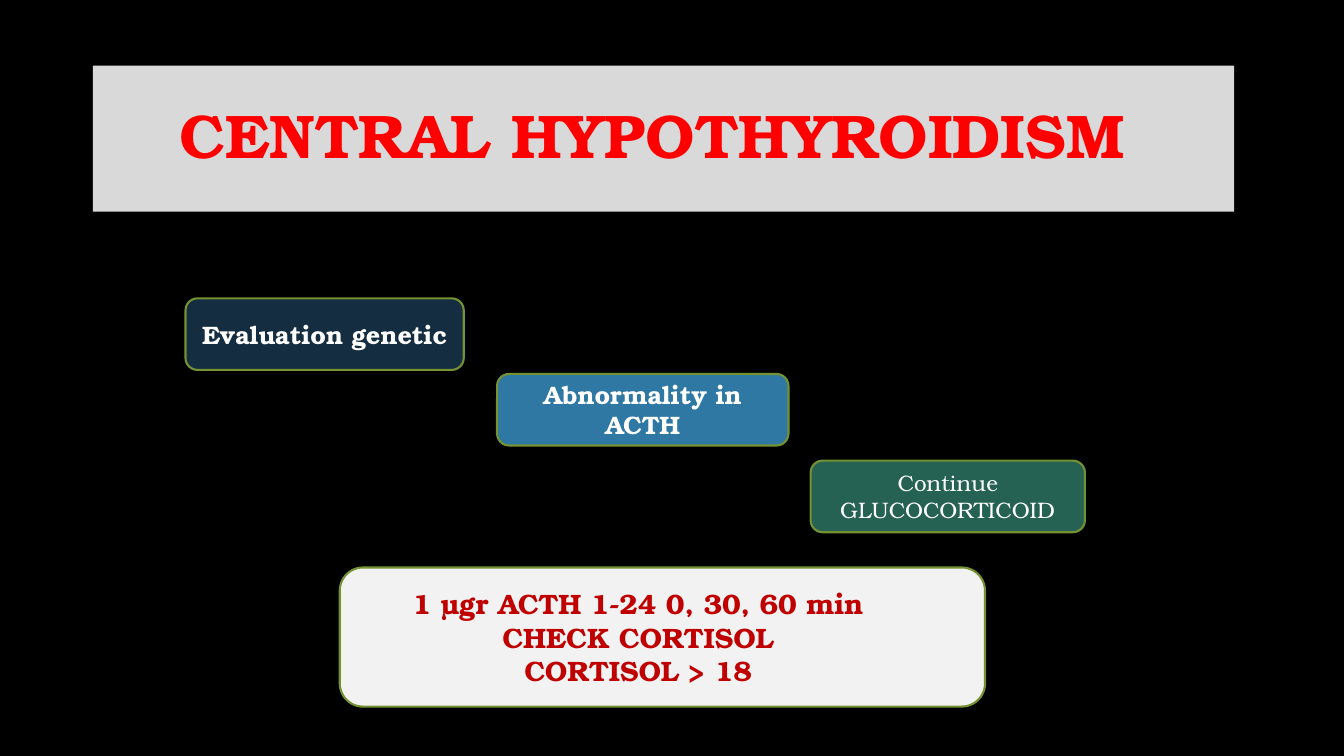
from dataclasses import dataclass

from pptx import Presentation
from pptx.dml.color import RGBColor as Rgb
from pptx.enum.shapes import MSO_SHAPE as Kind
from pptx.enum.text import MSO_ANCHOR as Anchor, PP_ALIGN as Align
from pptx.util import Inches, Pt


@dataclass(frozen=True)
class Theme:
    """Colours, font and type sizes of the slide."""
    font: str = "TeX Gyre Bonum"
    back: str = "000000"
    band: str = "D9D9D9"
    title: str = "FF0000"
    edge: str = "759232"
    navy: str = "152D40"
    blue: str = "2E78A3"
    green: str = "256253"
    white: str = "FFFFFF"
    panel: str = "F2F2F2"
    alert: str = "C00000"
    head: int = 44
    test: int = 20
    step: int = 18
    small: int = 16


LOOK = Theme()


def write(shape, text, size, color, bold=True, space=1.0, right=0.1, pads=()):
    """Fill a shape with centred lines; pads are right indents by line."""
    frame = shape.text_frame
    frame.word_wrap = True
    frame.vertical_anchor = Anchor.MIDDLE
    frame.margin_right = Inches(right)
    frame.text = text
    for para in frame.paragraphs:
        para.alignment = Align.CENTER
        para.line_spacing = space
        font = para.font
        font.name, font.size, font.bold = LOOK.font, Pt(size), bold
        font.color.rgb = Rgb.from_string(color)
    for para, pad in zip(frame.paragraphs, pads):
        para._p.get_or_add_pPr().set("marR", str(Inches(pad)))


def block(slide, box, fill, kind=Kind.ROUNDED_RECTANGLE, edge=LOOK.edge):
    """Draw a filled block in a box of inches, with an optional edge."""
    shape = slide.shapes.add_shape(kind, *map(Inches, box))
    shape.shadow.inherit = False
    shape.fill.solid()
    shape.fill.fore_color.rgb = Rgb.from_string(fill)
    if edge:
        shape.line.color.rgb = Rgb.from_string(edge)
        shape.line.width = Pt(1.5)
    else:
        shape.line.fill.background()
    return shape


def header(slide, box):
    """Draw the title band."""
    band = block(slide, box, LOOK.band, Kind.RECTANGLE, None)
    write(band, "CENTRAL HYPOTHYROIDISM", LOOK.head, LOOK.title,
          space=0.9, right=0.32)


def steps(slide, box):
    """Draw the three steps descending from the top left of the box."""
    left, top, width, height = box
    high = 0.71
    items = [
        (0, 0, 2.76, LOOK.navy, "Evaluation genetic", LOOK.step, True),
        (3.09, 0.75, 2.89, LOOK.blue, "Abnormality in ACTH", LOOK.step, True),
        (width - 2.72, height - high, 2.72, LOOK.green,
         "Continue GLUCOCORTICOID", LOOK.small, False),
    ]
    for x, y, wide, fill, text, size, bold in items:
        step = block(slide, (left + x, top + y, wide, high), fill)
        write(step, text, size, LOOK.white, bold)


def protocol(slide, box):
    """Draw the panel with the test protocol."""
    lines = ["1 µgr ACTH 1-24 0, 30, 60 min", "CHECK CORTISOL", "CORTISOL > 18"]
    write(block(slide, box, LOOK.panel), "\n".join(lines), LOOK.test,
          LOOK.alert, right=0.2, pads=(0.38,))


def main():
    """Build and save the slide."""
    deck = Presentation()
    deck.slide_width, deck.slide_height = Inches(13.33), Inches(7.5)
    slide = deck.slides.add_slide(deck.slide_layouts[6])
    back = slide.background.fill
    back.solid()
    back.fore_color.rgb = Rgb.from_string(LOOK.back)
    header(slide, (0.92, 0.65, 11.32, 1.45))
    steps(slide, (1.84, 2.96, 8.92, 2.32))
    protocol(slide, (3.37, 5.63, 6.4, 1.38))
    deck.save("out.pptx")


if __name__ == "__main__":
    main()
